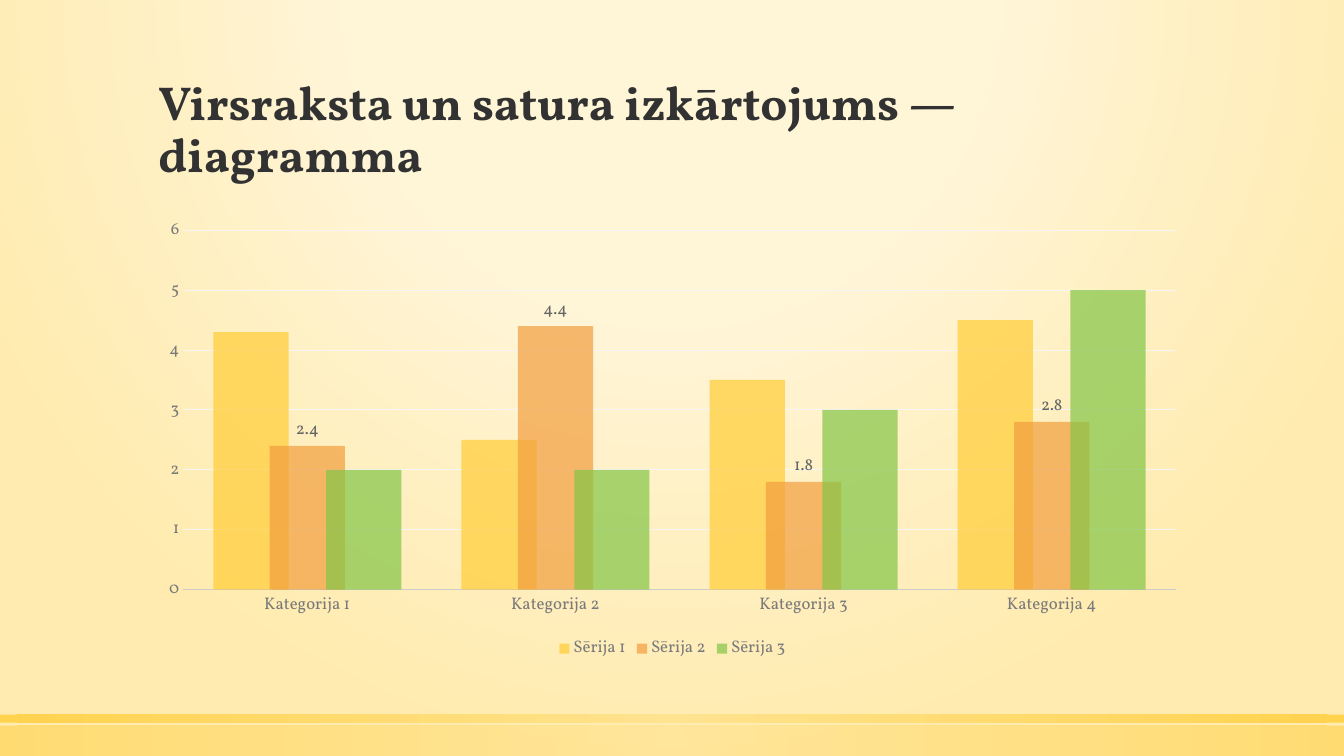
from dataclasses import dataclass
from typing import Optional

from lxml import etree
from pptx import Presentation
from pptx.chart.data import CategoryChartData
from pptx.dml.color import RGBColor
from pptx.enum.chart import XL_CHART_TYPE, XL_LABEL_POSITION, XL_LEGEND_POSITION, XL_TICK_MARK
from pptx.enum.shapes import MSO_SHAPE
from pptx.enum.text import MSO_ANCHOR, MSO_AUTO_SIZE, PP_ALIGN
from pptx.oxml import parse_xml
from pptx.oxml.ns import nsdecls, qn
from pptx.util import Emu, Pt

PX = 9144  # 100 px to the inch
FONT = "Vollkorn"
DARK, GRAY, LABEL_GRAY = "323232", "7A7A7A", "656565"
COLUMNS = XL_CHART_TYPE.COLUMN_CLUSTERED
OUTSIDE_END = XL_LABEL_POSITION.OUTSIDE_END
LEGEND_BOTTOM = XL_LEGEND_POSITION.BOTTOM
NO_TICK = XL_TICK_MARK.NONE
RECTANGLE = MSO_SHAPE.RECTANGLE
BOTTOM = MSO_ANCHOR.BOTTOM
NO_FIT = MSO_AUTO_SIZE.NONE
LEFT = PP_ALIGN.LEFT


@dataclass
class Box:
    left: int
    top: int
    width: int
    height: int

    def emu(self) -> tuple:
        return tuple(Emu(v * PX) for v in (self.left, self.top, self.width, self.height))


@dataclass
class Stop:
    position: int
    color: str
    opacity: int = 100


@dataclass
class Band:
    box: Box
    opacity: int


@dataclass
class Series:
    name: str
    values: tuple
    color: str
    label_color: Optional[str] = None


SLIDE_WIDTH, SLIDE_HEIGHT = 1333, 750
TITLE_BOX = Box(147, 51, 1040, 135)
CHART_BOX = Box(147, 208, 1040, 451)
BACKGROUND_STOPS = [Stop(0, "FFF5D7", 59), Stop(40, "FFF5D7", 66), Stop(100, "FFEBAF")]
BANDS = [
    Band(Box(0, 720, SLIDE_WIDTH, 30), 50),
    Band(Box(0, 709, SLIDE_WIDTH, 8), 80),
]
CATEGORIES = [f"Kategorija {number}" for number in range(1, 5)]
SERIES = [
    Series("Sērija 1", (4.3, 2.5, 3.5, 4.5), "FFCD36"),
    Series("Sērija 2", (2.4, 4.4, 1.8, 2.8), "F29E3E", LABEL_GRAY),
    Series("Sērija 3", (2, 2, 3, 5), "83C546"),
]
SERIES_OPACITY = 70


def rgb(color: str) -> RGBColor:
    return RGBColor.from_string(color)


def format_font(font, *, size: int, color: str, bold: bool = False) -> None:
    font.name, font.size, font.bold = FONT, Pt(size), bold
    font.color.rgb = rgb(color)


def write_text(shape, text: str, *, size: int, color: str, bold: bool, spacing: float) -> None:
    frame = shape.text_frame
    frame.word_wrap, frame.auto_size, frame.vertical_anchor = True, NO_FIT, BOTTOM
    para = frame.paragraphs[0]
    para.alignment, para.line_spacing = LEFT, spacing
    span = para.add_run()
    span.text = text
    format_font(span.font, size=size, color=color, bold=bold)


def fill_radial(fill, element, stops: list, *, top: int = 50, bottom: int = 50) -> None:
    """Put a circular gradient in place of the fill of the element."""
    fill.background()
    empty = element.find(".//" + qn("a:noFill"))
    stop_xml = "".join(
        f'<a:gs pos="{stop.position * 1000}"><a:srgbClr val="{stop.color}">'
        f'<a:alpha val="{stop.opacity * 1000}"/></a:srgbClr></a:gs>'
        for stop in stops
    )
    gradient = parse_xml(
        f'<a:gradFill {nsdecls("a")} rotWithShape="1"><a:gsLst>{stop_xml}</a:gsLst>'
        f'<a:path path="circle"><a:fillToRect l="50000" t="{top * 1000}" '
        f'r="50000" b="{bottom * 1000}"/></a:path></a:gradFill>'
    )
    empty.getparent().replace(empty, gradient)


def draw_band(page, band: Band) -> None:
    shape = page.shapes.add_shape(RECTANGLE, *band.box.emu())
    shape.shadow.inherit = False
    stops = [Stop(0, "FFE186", band.opacity), Stop(100, "FFCD36", band.opacity)]
    fill_radial(shape.fill, shape.element, stops)
    shape.line.fill.background()


def format_axes(chart) -> None:
    for axis in (chart.category_axis, chart.value_axis):
        axis.major_tick_mark = axis.minor_tick_mark = NO_TICK
        format_font(axis.tick_labels.font, size=12, color=GRAY)
    category_line = chart.category_axis.format.line
    category_line.color.rgb, category_line.width = rgb("CCCCCC"), Pt(1.25)
    value_axis = chart.value_axis
    value_axis.minimum_scale, value_axis.maximum_scale, value_axis.major_unit = 0, 6, 1
    value_axis.format.line.fill.background()
    value_axis.has_major_gridlines = True
    grid_line = value_axis.major_gridlines.format.line
    grid_line.color.rgb, grid_line.width = rgb("F5F5F5"), Pt(0.75)


def format_series(plotted, series: Series) -> None:
    plotted.invert_if_negative = False
    fill = plotted.format.fill
    fill.solid()
    fill.fore_color.rgb = rgb(series.color)
    color = plotted._element.find(".//" + qn("a:srgbClr"))
    etree.SubElement(color, qn("a:alpha")).set("val", str(SERIES_OPACITY * 1000))
    if series.label_color:
        labels = plotted.data_labels
        labels.show_value, labels.position = True, OUTSIDE_END
        format_font(labels.font, size=12, color=series.label_color)


def draw_chart(page) -> None:
    data = CategoryChartData()
    data.categories = CATEGORIES
    for series in SERIES:
        data.add_series(series.name, series.values)
    chart = page.shapes.add_chart(COLUMNS, *CHART_BOX.emu(), data).chart
    format_font(chart.font, size=10, color=DARK)
    chart.has_title = False
    chart.has_legend = True
    chart.legend.position, chart.legend.include_in_layout = LEGEND_BOTTOM, False
    format_font(chart.legend.font, size=12, color=GRAY)
    plot = chart.plots[0]
    plot.gap_width, plot.overlap, plot.vary_by_categories = 80, 25, False
    format_axes(chart)
    for plotted, series in zip(plot.series, SERIES):
        format_series(plotted, series)


def main() -> None:
    deck = Presentation()
    deck.slide_width, deck.slide_height = Emu(SLIDE_WIDTH * PX), Emu(SLIDE_HEIGHT * PX)
    page = deck.slides.add_slide(deck.slide_layouts[5])

    # Background and bands along the bottom edge
    fill_radial(page.background.fill, page.element, BACKGROUND_STOPS, top=-80, bottom=180)
    for band in BANDS:
        draw_band(page, band)

    # Title
    title = page.shapes.title
    title.left, title.top, title.width, title.height = TITLE_BOX.emu()
    write_text(title, "Virsraksta un satura izkārtojums — diagramma",
               size=34, color=DARK, bold=True, spacing=0.9)

    # Column chart
    draw_chart(page)
    deck.save("out.pptx")


if __name__ == "__main__":
    main()
